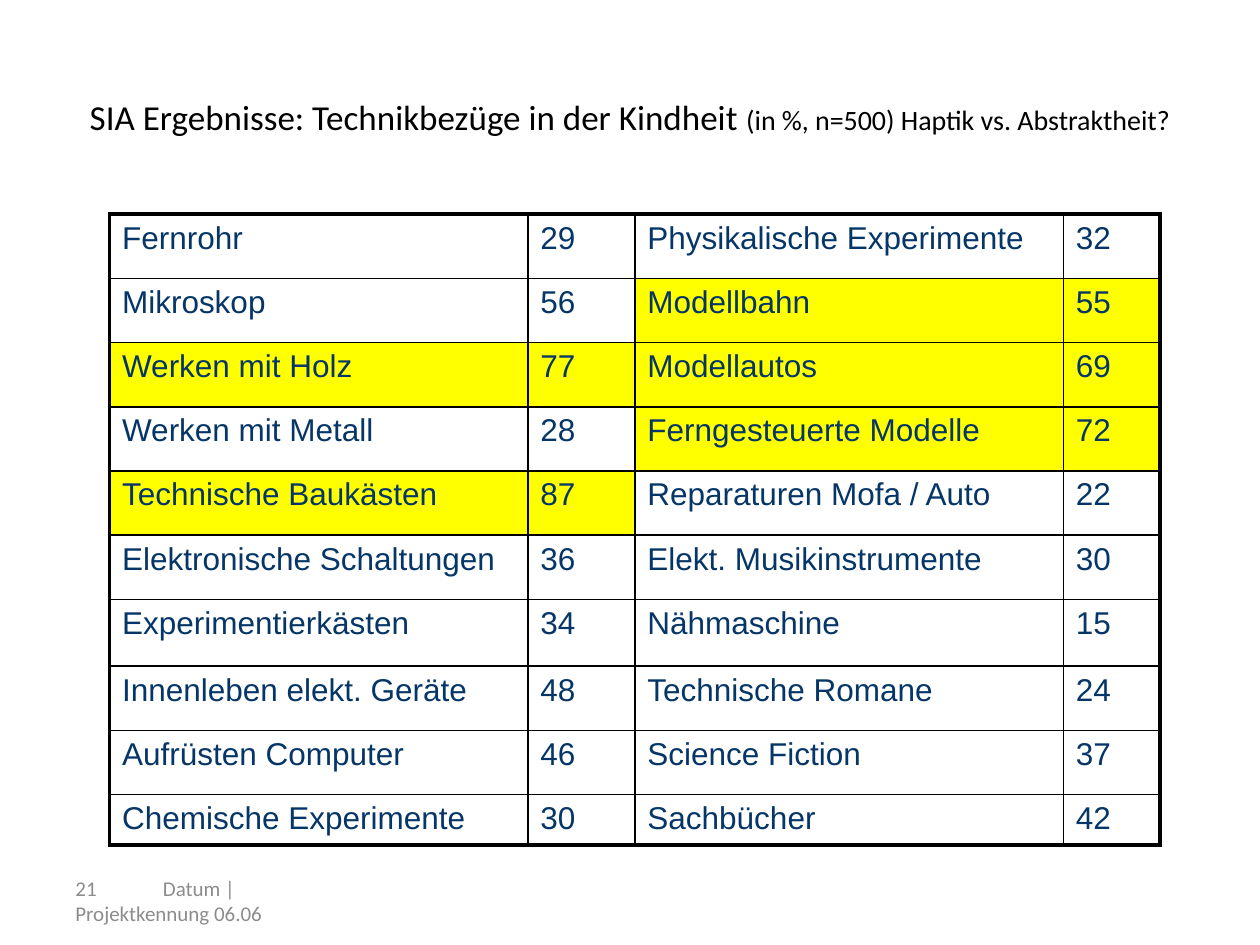
from pptx import Presentation
from pptx.dml.color import RGBColor
from pptx.enum import text
from pptx.oxml import parse_xml
from pptx.oxml.ns import nsdecls
from pptx.util import Pt

BLACK = RGBColor(0x00, 0x00, 0x00)
GREY = RGBColor(0x8C, 0x8C, 0x8C)
NAVY = RGBColor(0x06, 0x36, 0x67)
YELLOW = RGBColor(0xFF, 0xFF, 0x00)

TITLE = {"name": "Calibri", "size": Pt(20)}
TITLE_NOTE = {"name": "Calibri", "size": Pt(16)}
FOOTER = {"name": "Calibri", "size": Pt(12)}
CELL = {"name": "Arial", "size": Pt(18)}


def add_run(p, content, fmt, color):
    r = p.add_run()
    r.text = content
    for key, value in fmt.items():
        setattr(r.font, key, value)
    r.font.color.rgb = color


def add_border(cell, side, width):
    # Border lines come before the fill in the cell properties
    cell._tc.get_or_add_tcPr().append(parse_xml(
        f'<a:{side} {nsdecls("a")} w="{Pt(width)}"><a:solidFill>'
        f'<a:srgbClr val="{BLACK}"/></a:solidFill></a:{side}>'))


prs = Presentation()
prs.slide_width, prs.slide_height = Pt(720), Pt(540)
s = prs.slides.add_slide(prs.slide_layouts[5])

# Title
sp = s.shapes.title
sp.left, sp.top, sp.width, sp.height = Pt(36), Pt(21.6), Pt(648), Pt(90)
tf = sp.text_frame
tf.vertical_anchor = text.MSO_ANCHOR.MIDDLE
p = tf.paragraphs[0]
p.alignment = text.PP_ALIGN.CENTER
add_run(p, "SIA Ergebnisse: Technikbezüge in der Kindheit ", TITLE, BLACK)
add_run(p, "(in %, n=500) Haptik vs. Abstraktheit?", TITLE_NOTE, BLACK)

# Footer, with a tab stop between page number and date
sp = s.shapes.add_textbox(Pt(36), Pt(500.4), Pt(168), Pt(28.8))
tf = sp.text_frame
tf.word_wrap = True
tf.vertical_anchor = text.MSO_ANCHOR.MIDDLE
p = tf.paragraphs[0]
add_run(p, "21\tDatum | Projektkennung 06.06", FOOTER, GREY)
p._p.get_or_add_pPr().append(parse_xml(
    f'<a:tabLst {nsdecls("a")}><a:tab pos="{Pt(50)}" algn="l"/></a:tabLst>'))

# Table data: item and percentage, twice per row
rows = [
    ("Fernrohr", 29, "Physikalische Experimente", 32),
    ("Mikroskop", 56, "Modellbahn", 55),
    ("Werken mit Holz", 77, "Modellautos", 69),
    ("Werken mit Metall", 28, "Ferngesteuerte Modelle", 72),
    ("Technische Baukästen", 87, "Reparaturen Mofa / Auto", 22),
    ("Elektronische Schaltungen", 36, "Elekt. Musikinstrumente", 30),
    ("Experimentierkästen", 34, "Nähmaschine", 15),
    ("Innenleben elekt. Geräte", 48, "Technische Romane", 24),
    ("Aufrüsten Computer", 46, "Science Fiction", 37),
    ("Chemische Experimente", 30, "Sachbücher", 42),
]
highlighted = {"Modellbahn", "Werken mit Holz", "Modellautos",
               "Ferngesteuerte Modelle", "Technische Baukästen"}
col_widths = [239, 61.2, 244.8, 55.4]
row_heights = [36.7] * 6 + [38.2] + [36.7] * 2 + [27.4]
last_row, last_col = len(rows) - 1, len(col_widths) - 1

# Table
table = s.shapes.add_table(len(rows), len(col_widths), Pt(62.6), Pt(122.4),
                           Pt(sum(col_widths)), Pt(sum(row_heights))).table
table.first_row = table.horz_banding = False
for col, width in zip(table.columns, col_widths):
    col.width = Pt(width)
for row, height in zip(table.rows, row_heights):
    row.height = Pt(height)

for i, values in enumerate(rows):
    for j, value in enumerate(values):
        cell = table.cell(i, j)
        add_run(cell.text_frame.paragraphs[0], str(value), CELL, NAVY)
        # Thick outer frame, thin inner grid
        outer = {"lnL": j == 0, "lnR": j == last_col,
                 "lnT": i == 0, "lnB": i == last_row}
        for side, is_outer in outer.items():
            add_border(cell, side, 2.25 if is_outer else 1)
        # An item and its percentage share the highlight
        if values[j - j % 2] in highlighted:
            cell.fill.solid()
            cell.fill.fore_color.rgb = YELLOW
        else:
            cell.fill.background()

prs.save("out.pptx")
